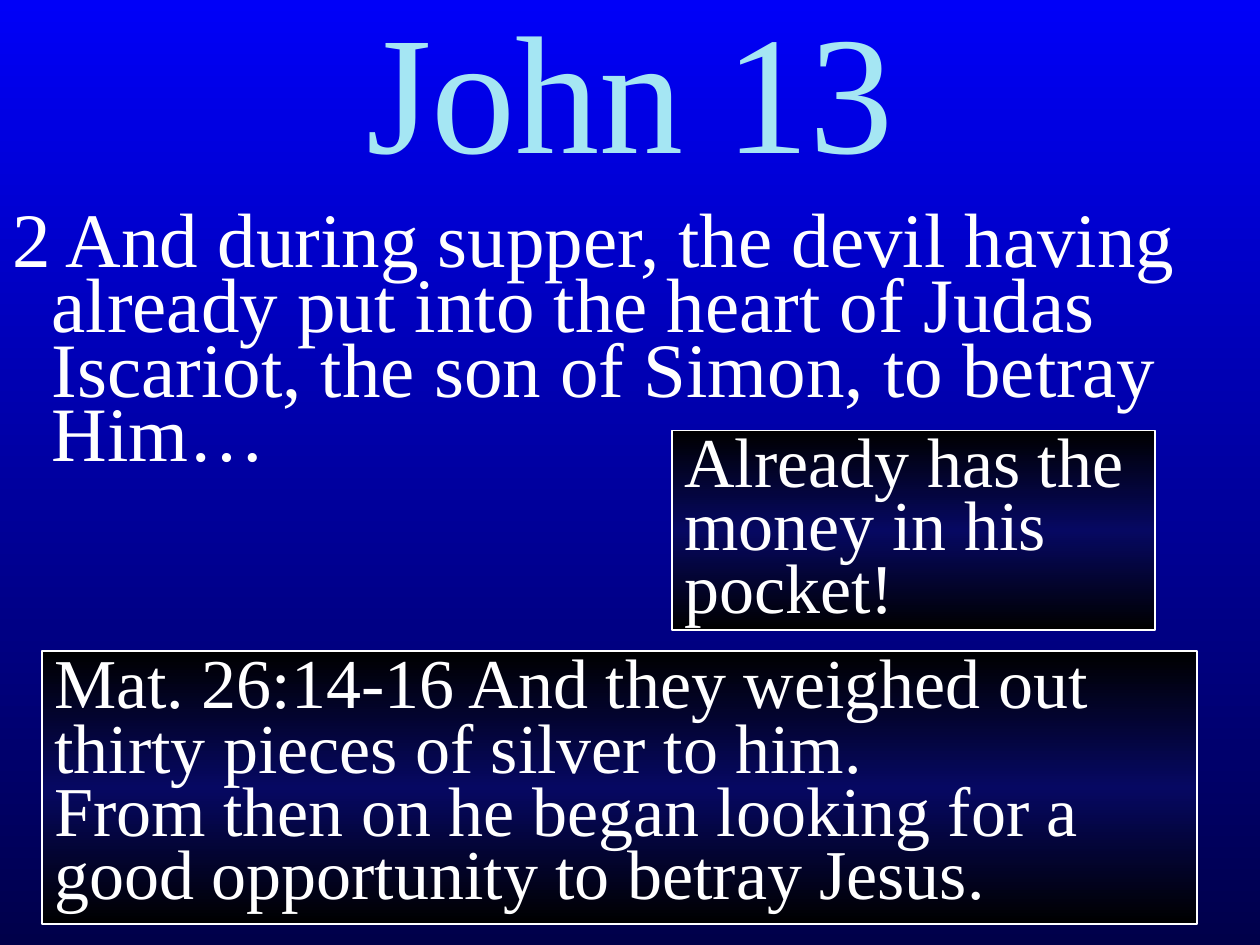
from copy import deepcopy

from pptx import Presentation
from pptx.dml.color import RGBColor
from pptx.enum.shapes import MSO_SHAPE
from pptx.enum.text import MSO_ANCHOR, PP_ALIGN
from pptx.oxml.ns import qn
from pptx.util import Pt

LEFT, CENTER = PP_ALIGN.LEFT, PP_ALIGN.CENTER
TOP, MIDDLE = MSO_ANCHOR.TOP, MSO_ANCHOR.MIDDLE
RECTANGLE = MSO_SHAPE.RECTANGLE

WHITE = RGBColor(0xFF, 0xFF, 0xFF)
BLACK = RGBColor(0x00, 0x00, 0x00)
PALE_CYAN = RGBColor(0xA5, 0xE6, 0xF3)
BRIGHT_BLUE = RGBColor(0x00, 0x00, 0xF8)
DARK_BLUE = RGBColor(0x00, 0x00, 0x4A)
NAVY = RGBColor(0x06, 0x08, 0x62)


def paint_downward(fill, owner, colors):
    """Fill with evenly spaced colours running from top to bottom."""
    fill.gradient()
    fill.gradient_angle = 270
    stop_list = next(owner.iter(qn("a:gsLst")))
    while len(stop_list) < len(colors):
        stop_list.append(deepcopy(stop_list[-1]))
    for index, (stop, color) in enumerate(zip(fill.gradient_stops, colors)):
        stop.color.rgb = color
        stop.position = index / (len(colors) - 1)


def write(box, paragraphs, size, color, align=LEFT, anchor=TOP):
    """Write (text, line spacing) pairs and return the last paragraph."""
    frame = box.text_frame
    frame.word_wrap = True
    frame.vertical_anchor = anchor
    for index, (text, spacing) in enumerate(paragraphs):
        para = frame.add_paragraph() if index else frame.paragraphs[0]
        para.text = text
        para.alignment = align
        para.line_spacing = spacing
        para.font.name = "Times New Roman"
        para.font.size = Pt(size)
        para.font.color.rgb = color
    return para


deck = Presentation()
deck.slide_width, deck.slide_height = Pt(720), Pt(540)
page = deck.slides.add_slide(deck.slide_layouts[6])

# Background
paint_downward(page.background.fill, page.element, [BRIGHT_BLUE, DARK_BLUE])

# Title
title = page.shapes.add_textbox(Pt(0), Pt(0), Pt(720), Pt(120))
write(title, [("John 13", 0.8)], 96, PALE_CYAN, CENTER, MIDDLE)

# Verse with hanging indent
verse = page.shapes.add_textbox(Pt(0), Pt(120), Pt(720), Pt(384))
para = write(verse, [(
    "2 And during supper, the devil having already put into the heart of "
    "Judas Iscariot, the son of Simon, to betray Him…", 0.7)], 44, WHITE)
para.space_before = Pt(6.6)
indent = Pt(22.5)
properties = para._p.get_or_add_pPr()
properties.set("marL", str(indent))
properties.set("indent", str(-indent))

# Framed comments
comments = [
    ((384, 246, 276, 114), [("Already has the money in his pocket!", 0.75)]),
    ((24, 372, 660, 156), [
        ("Mat. 26:14-16 And they weighed out thirty pieces of silver to him.", 0.77),
        ("From then on he began looking for a good opportunity to betray Jesus.", 0.75),
    ]),
]
for place, paragraphs in comments:
    box = page.shapes.add_shape(RECTANGLE, *map(Pt, place))
    box.shadow.inherit = False
    paint_downward(box.fill, box.element, [BLACK, NAVY, BLACK])
    box.line.color.rgb = WHITE
    box.line.width = Pt(1)
    write(box, paragraphs, 40, WHITE)

deck.save("out.pptx")
